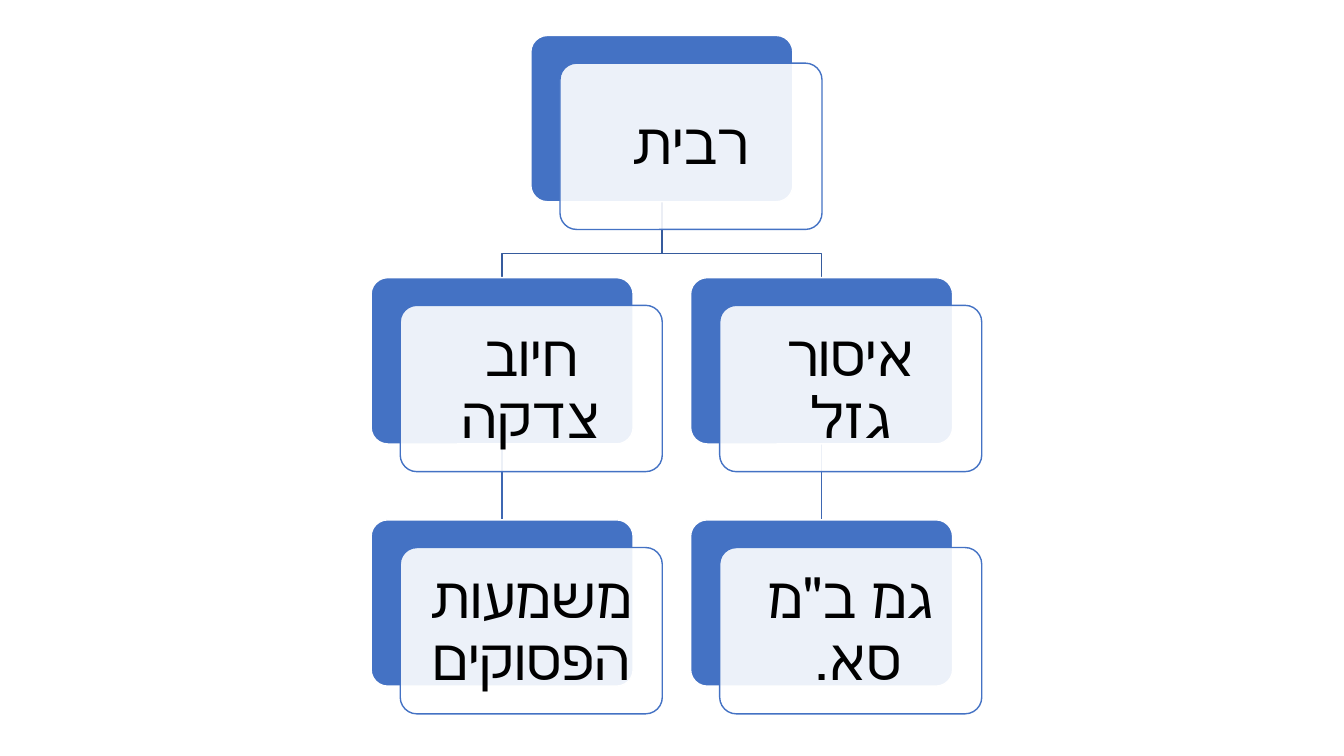
from dataclasses import dataclass

from lxml.etree import SubElement as Sub
from pptx import Presentation
from pptx.dml.color import RGBColor as Rgb
from pptx.enum.shapes import MSO_CONNECTOR as Link, MSO_SHAPE as Kind
from pptx.enum.text import MSO_ANCHOR as Anchor, PP_ALIGN as Align
from pptx.oxml.ns import qn
from pptx.util import Pt


@dataclass
class Theme:
    blue: str = "4472C4"
    white: str = "FFFFFF"
    black: str = "000000"
    trunk: str = "365B9D"
    branch: str = "3E67B2"
    font: str = "Calibri"
    size: float = 41
    line: float = 1


WIDE, HIGH = 187.2, 118.8
LEFT, TOP = 265.1, 25.3
STEP, DROP = 228.2, 173
SHIFT_X, SHIFT_Y = 20.8, 19.8
INNER, PAD = 3.3, 12.3
BEND = 17.4

ROOT = ("רבית", 0.5, 0)
CHAINS = [
    [("איסור גזל", 1, 1), ('גמ ב"מ סא. ', 1, 2)],
    [("חיוב צדקה", 0, 1), ("משמעות הפסוקים", 0, 2)],
]


def spot(col, row):
    return LEFT + col * STEP, TOP + row * DROP


def write(frame, text, *, size, font, color, align=Align.CENTER, rtl=True):
    para = frame.paragraphs[0]
    para.alignment = align
    para.line_spacing = 0.9
    props = para._p.get_or_add_pPr()
    props.set("rtl", str(int(rtl)))
    after = Sub(props, qn("a:spcAft"))
    Sub(after, qn("a:spcPct"), val="35000")
    run = para.add_run()
    run.text = text
    run.font.size = Pt(size)
    run.font.name = font
    run.font.color.rgb = Rgb.from_string(color)


class Chart:
    def __init__(self, slide, theme):
        self.slide = slide
        self.theme = theme

    def stroke(self, shape, color):
        shape.line.color.rgb = Rgb.from_string(color)
        shape.line.width = Pt(self.theme.line)

    def elbow(self, start, end):
        (x1, y1), (x2, y2) = start, end
        bend = y2 - BEND
        pen = self.slide.shapes.build_freeform(Pt(x1), Pt(y1))
        points = [(x1, bend), (x2, bend), (x2, y2)]
        pen.add_line_segments([(Pt(x), Pt(y)) for x, y in points], close=False)
        shape = pen.convert_to_shape()
        shape.shadow.inherit = False
        shape.fill.background()
        self.stroke(shape, self.theme.trunk)

    def straight(self, start, end):
        ends = [Pt(n) for n in (*start, *end)]
        link = self.slide.shapes.add_connector(Link.STRAIGHT, *ends)
        self.stroke(link, self.theme.branch)
        Sub(link._element.spPr, qn("a:effectLst"))
        return link

    def panel(self, x, y, fill, edge, alpha=None):
        box = [Pt(n) for n in (x, y, WIDE, HIGH)]
        shape = self.slide.shapes.add_shape(Kind.ROUNDED_RECTANGLE, *box)
        shape.adjustments[0] = 0.1
        shape.shadow.inherit = False
        shape.fill.solid()
        shape.fill.fore_color.rgb = Rgb.from_string(fill)
        if alpha:
            color = shape._element.spPr.find(qn("a:solidFill"))[0]
            Sub(color, qn("a:alpha"), val=str(alpha * 1000))
        self.stroke(shape, edge)
        return shape

    def label(self, x, y, text):
        box = [Pt(n) for n in (x, y, WIDE - 2 * INNER, HIGH - 2 * INNER)]
        frame = self.slide.shapes.add_textbox(*box).text_frame
        frame.word_wrap = True
        frame.vertical_anchor = Anchor.MIDDLE
        frame.margin_left = frame.margin_right = Pt(PAD)
        frame.margin_top = frame.margin_bottom = Pt(PAD)
        theme = self.theme
        write(frame, text, size=theme.size, font=theme.font, color=theme.black)

    def node(self, text, col, row):
        theme = self.theme
        x, y = spot(col, row)
        back = self.panel(x, y, theme.blue, theme.white)
        x, y = x + SHIFT_X, y + SHIFT_Y
        self.panel(x, y, theme.white, theme.blue, alpha=90)
        self.label(x + INNER, y + INNER, text)
        return back


def head(node):
    x, y = spot(*node[1:])
    return x + WIDE / 2, y


def foot(node):
    x, y = head(node)
    return x, y + HIGH


def main():
    deck = Presentation()
    deck.slide_width, deck.slide_height = Pt(960), Pt(540)
    chart = Chart(deck.slides.add_slide(deck.slide_layouts[6]), Theme())
    links = []
    for upper, lower in CHAINS:
        links.append(chart.straight(foot(upper), head(lower)))
        chart.elbow(foot(ROOT), head(upper))
    chart.node(*ROOT)
    for link, (upper, lower) in zip(links, CHAINS):
        link.begin_connect(chart.node(*upper), 2)
        link.end_connect(chart.node(*lower), 0)
    deck.save("out.pptx")


if __name__ == "__main__":
    main()
